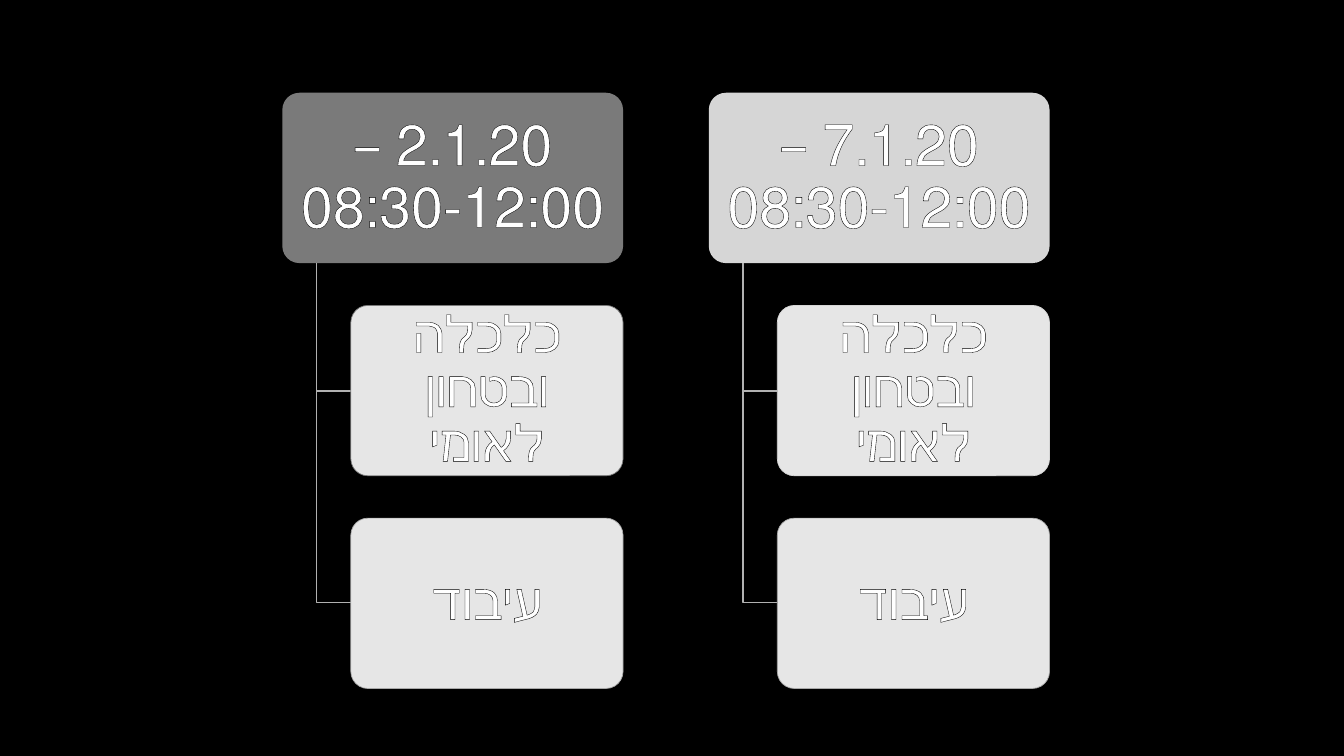
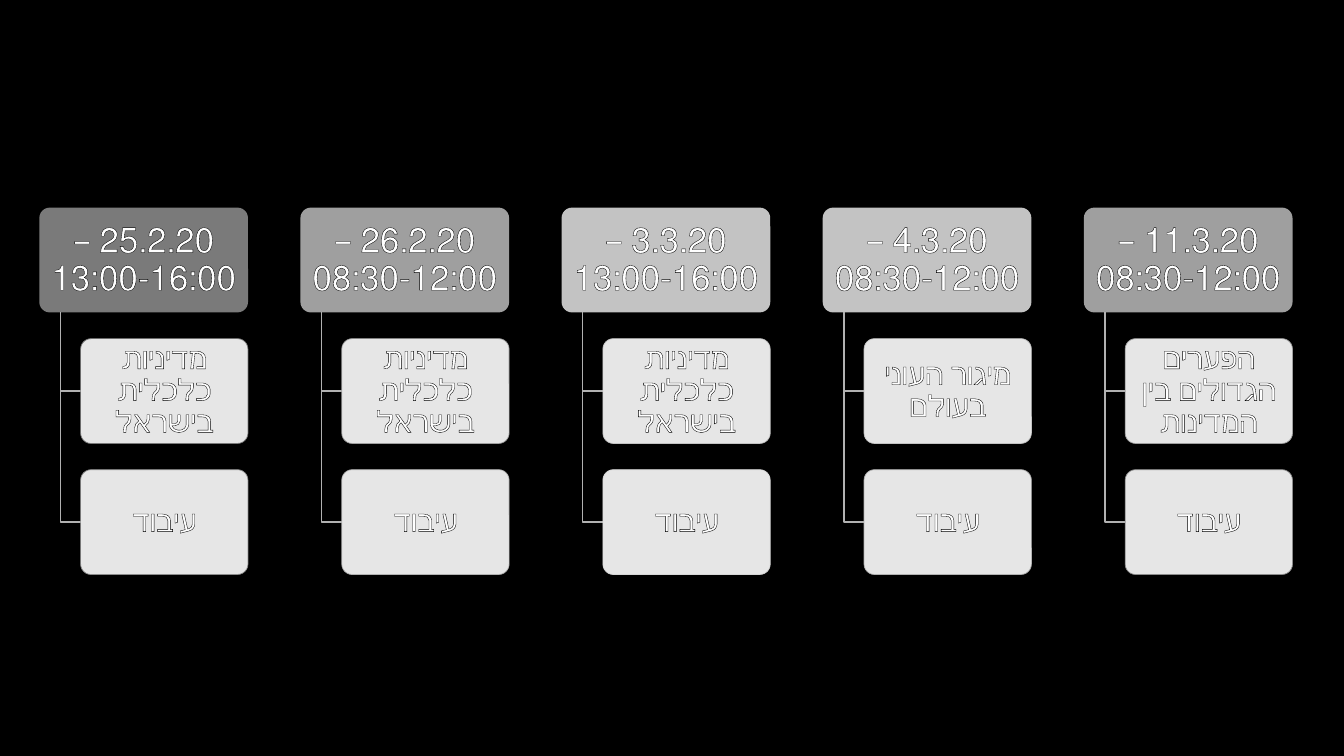
from dataclasses import dataclass

from lxml import etree
from pptx import Presentation
from pptx.dml.color import RGBColor
from pptx.enum.lang import MSO_LANGUAGE_ID as Language
from pptx.enum.shapes import MSO_SHAPE as Shape
from pptx.enum.text import MSO_ANCHOR as Anchor, PP_ALIGN as Align
from pptx.oxml.ns import qn
from pptx.util import Pt

EMU_PER_PX = 9144  # 100 px to the inch
SLIDE_WIDTH, SLIDE_HEIGHT = 1333, 750

FONT = "Calibri"
CORNER = 0.1
CARD_OPACITY = 90

BLACK = RGBColor(0x00, 0x00, 0x00)
WHITE = RGBColor(0xFF, 0xFF, 0xFF)
BRANCH_GRAY = RGBColor(0xB1, 0xB1, 0xB1)
DARK = RGBColor(0x7A, 0x7A, 0x7A)
MEDIUM_DARK = RGBColor(0x8C, 0x8C, 0x8C)
MEDIUM = RGBColor(0x9F, 0x9F, 0x9F)
SOFT = RGBColor(0xA8, 0xA8, 0xA8)
LIGHT = RGBColor(0xC3, 0xC3, 0xC3)
PALE = RGBColor(0xD6, 0xD6, 0xD6)

ECONOMY = "כלכלה ובטחון לאומי"
POLICY = "מדיניות כלכלית בישראל"
PROCESSING = "עיבוד"


@dataclass
class Grid:
    """Sizes of one schedule: lengths in px, text sizes in points."""
    left: int
    top: int
    width: int
    height: int
    column_step: int
    row_step: int
    header_size: int
    card_size: int
    header_insets: tuple
    card_insets: tuple


@dataclass
class Session:
    time: str
    topic: str
    color: RGBColor
    processing_color: RGBColor


WIDE_GRID = Grid(280, 92, 338, 169, 423, 211, 41, 36, (9, 6), (7, 5))
COMPACT_GRID = Grid(39, 206, 207, 104, 259, 130, 25, 21, (5, 3), (4, 3))

JANUARY = [
    Session("2.1.20 – 08:30-12:00", ECONOMY, DARK, SOFT),
    Session("7.1.20 – 08:30-12:00", ECONOMY, PALE, SOFT),
]
SPRING = [
    Session("25.2.20 – 13:00-16:00", POLICY, DARK, MEDIUM_DARK),
    Session("26.2.20 – 08:30-12:00", POLICY, MEDIUM, BRANCH_GRAY),
    Session("3.3.20 – 13:00-16:00", POLICY, LIGHT, PALE),
    Session("4.3.20 – 08:30-12:00", "מיגור העוני בעולם", LIGHT, BRANCH_GRAY),
    Session("11.3.20 – 08:30-12:00", "הפערים הגדולים בין המדינות",
            MEDIUM, MEDIUM_DARK),
]


def px(length):
    return round(length) * EMU_PER_PX


def set_opacity(shape, percent):
    color = shape.fill._xPr.find(qn("a:solidFill"))[0]
    etree.SubElement(color, qn("a:alpha"), val=str(percent * 1000))


def outline_text(run, color, width):
    line = etree.SubElement(run._r.get_or_add_rPr(), qn("a:ln"),
                            w=str(Pt(width)))
    fill = etree.SubElement(line, qn("a:solidFill"))
    etree.SubElement(fill, qn("a:srgbClr"), val=str(color))


def write_text(shape, text, size, insets):
    """Fill the shape with centred right-to-left, outlined text."""
    frame = shape.text_frame
    frame.word_wrap = True
    frame.vertical_anchor = Anchor.MIDDLE
    frame.margin_left = frame.margin_right = px(insets[0])
    frame.margin_top = frame.margin_bottom = px(insets[1])
    paragraph = frame.paragraphs[0]
    paragraph.alignment = Align.CENTER
    paragraph.line_spacing = 0.9
    paragraph._p.get_or_add_pPr().set("rtl", "1")
    paragraph.font.name = FONT
    paragraph.font.size = Pt(size)
    paragraph.font.color.rgb = WHITE
    run = paragraph.add_run()
    run.text = text
    run.font.language_id = Language.HEBREW
    outline_text(run, BLACK, 0.75)


def add_box(slide, left, top, width, height, fill):
    box = slide.shapes.add_shape(Shape.ROUNDED_RECTANGLE, px(left), px(top),
                                 px(width), px(height))
    box.adjustments[0] = CORNER
    box.shadow.inherit = False
    box.fill.solid()
    box.fill.fore_color.rgb = fill
    box.line.fill.background()
    return box


def add_header(slide, grid, left, session):
    header = add_box(slide, left, grid.top, grid.width, grid.height,
                     session.color)
    write_text(header, session.time, grid.header_size, grid.header_insets)


def add_card(slide, grid, left, top, text, border):
    card = add_box(slide, left, top, grid.width * 0.8, grid.height, WHITE)
    set_opacity(card, CARD_OPACITY)
    card.line.color.rgb = border
    card.line.width = Pt(0.5)
    write_text(card, text, grid.card_size, grid.card_insets)


def add_branch(slide, left, top, right, bottom):
    """Draw a line down from the header, then across to a card."""
    builder = slide.shapes.build_freeform(px(left), px(top))
    builder.add_line_segments([(px(left), px(bottom)),
                               (px(right), px(bottom))], close=False)
    branch = builder.convert_to_shape()
    branch.shadow.inherit = False
    branch.fill.background()
    branch.line.color.rgb = BRANCH_GRAY
    branch.line.width = Pt(1)


def add_session(slide, grid, left, session):
    add_header(slide, grid, left, session)
    branch_left = left + grid.width * 0.1
    card_left = left + grid.width * 0.2
    cards = [(session.topic, session.color),
             (PROCESSING, session.processing_color)]
    for row, (text, border) in enumerate(cards, start=1):
        top = grid.top + row * grid.row_step
        add_branch(slide, branch_left, grid.top + grid.height,
                   card_left, top + grid.height / 2)
        add_card(slide, grid, card_left, top, text, border)


def add_schedule_slide(presentation, grid, sessions):
    slide = presentation.slides.add_slide(presentation.slide_layouts[6])
    for column, session in enumerate(sessions):
        add_session(slide, grid, grid.left + column * grid.column_step,
                    session)


def main():
    presentation = Presentation()
    presentation.slide_width = px(SLIDE_WIDTH)
    presentation.slide_height = px(SLIDE_HEIGHT)
    background = presentation.slide_master.background.fill
    background.solid()
    background.fore_color.rgb = BLACK
    add_schedule_slide(presentation, WIDE_GRID, JANUARY)
    add_schedule_slide(presentation, COMPACT_GRID, SPRING)
    presentation.save("out.pptx")


if __name__ == "__main__":
    main()
